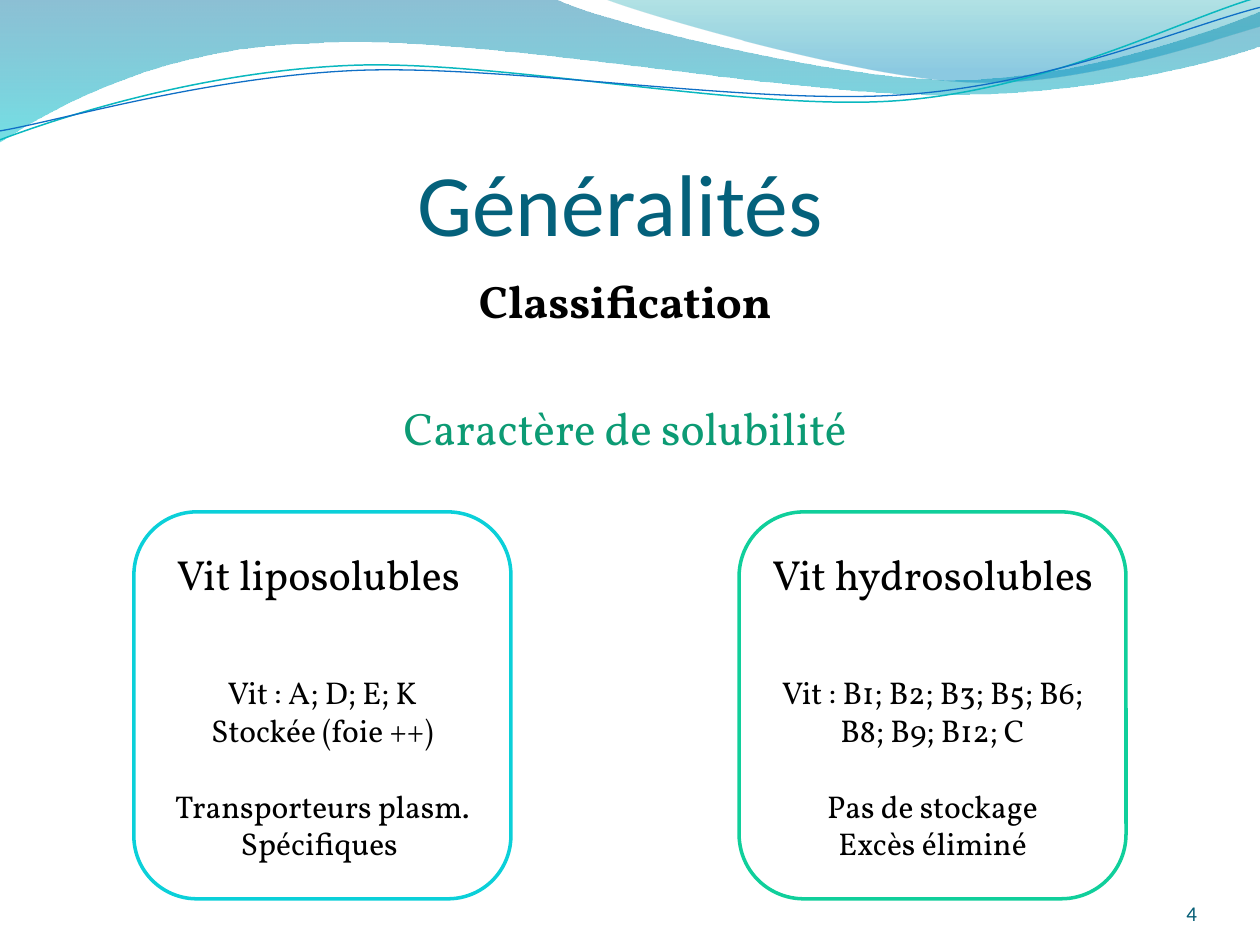
from lxml.etree import SubElement as Sub
from pptx import Presentation
from pptx.dml.color import RGBColor
from pptx.enum.shapes import MSO_SHAPE as Kind
from pptx.enum.text import MSO_ANCHOR as Anchor, PP_ALIGN as Align
from pptx.oxml.ns import qn
from pptx.util import Cm, Pt

# Paths in cm: a pair is a straight line, six numbers are a curve.
BANDS = [
    ([(0, 0), (11.18, -0.03),
      (12.09, 0.43, 16.87, 1.6, 19.25, 1.6),
      (21.67, 1.6, 24.33, 0.66, 25.4, 0.23), (25.43, 0.91),
      (24.97, 1.12, 22.1, 1.93, 18.95, 1.91),
      (15.8, 1.91, 9.7, 0.71, 6.53, 0.86),
      (3.28, 0.91, 1.17, 2.11, -0.03, 2.87)],
     [(0, "0074A1", 45), (100, "00C6CF", 55)]),
    ([(12.17, -0.03),
      (12.93, 0.28, 17.32, 1.57, 19.53, 1.65),
      (21.74, 1.75, 24.41, 0.81, 25.4, 0.53), (25.4, 0)],
     [(0, "00A1A9", 30), (80, "008BBF", 45)]),
]
WAVES = [
    ([(0, 2.82),
      (1.22, 2.36, 4.01, 1.45, 7.04, 1.32),
      (10.03, 1.19, 15.06, 2.26, 18.11, 2.03),
      (21.16, 1.8, 23.83, 0.38, 25.35, -0.05)], "0AB8BF", 0.85),
    ([(0, 2.64),
      (1.19, 2.44, 4.17, 1.55, 7.19, 1.42),
      (10.24, 1.3, 15.16, 2.13, 18.21, 1.91),
      (21.23, 1.7, 23.9, 0.53, 25.4, 0.15)], "0F6FC6", 0.75),
]

STYLES = {
    "title": dict(name="Calibri", size=Pt(50), color="04617B"),
    "head": dict(name="Vollkorn", size=Pt(26), color="000000", bold=True),
    "sub": dict(name="Vollkorn", size=Pt(26), color="0C9B74"),
    "group": dict(name="Vollkorn", size=Pt(24), color="000000"),
    "item": dict(name="Vollkorn", size=Pt(18), color="000000"),
    "page": dict(name="Vollkorn", size=Pt(12), color="045D75"),
}

# Each paragraph: text, style, space before in points.
TITLE = [("Généralités ", "title", 0)]
INTRO = [("Classification ", "head", 0),
         ("Caractère de solubilité ", "sub", 41.4)]
PAGE = [("4", "page", 0)]
CARDS = [
    (2.7, 7.6, "0BD0D9", [
        ("Vit liposolubles ", "group", 0),
        ("Vit : A; D; E; K", "item", 42.4),
        ("Stockée (foie ++)", "item", 0),
        ("Transporteurs plasm. Spécifiques ", "item", 21.6)]),
    (14.9, 7.8, "10CF9B", [
        ("Vit hydrosolubles ", "group", 0),
        ("Vit : B1; B2; B3; B5; B6; B8; B9; B12; C", "item", 42.4),
        ("Pas de stockage", "item", 21.6),
        ("Excès éliminé", "item", 0)]),
]
CARD_TOP, CARD_TALL = 10.32, 7.8


def tint(hue):
    return RGBColor.from_string(hue)


def draw(shapes, path, close):
    """Lay all points as lines, then join each curve's three into one."""
    dots = [(Cm(part[i]), Cm(part[i + 1]))
            for part in path for i in range(0, len(part), 2)]
    pen = shapes.build_freeform(*dots[0], scale=1.0)
    pen.add_line_segments(dots[1:], close=close)
    shape = pen.convert_to_shape()
    shape.shadow.inherit = False
    lines = iter(list(shape.element.spPr.iter(qn("a:lnTo"))))
    for part in path[1:]:
        first = next(lines)
        if len(part) == 6:
            first.tag = qn("a:cubicBezTo")
            for _ in range(2):
                line = next(lines)
                first.append(line[0])
                line.getparent().remove(line)
    return shape


def shade(shape, stops):
    """Fill from top to bottom with see-through colours."""
    shape.line.fill.background()
    shape.fill.gradient()
    shape.fill.gradient_angle = 270
    for stop, (place, hue, _) in zip(shape.fill.gradient_stops, stops):
        stop.position = place / 100
        stop.color.rgb = tint(hue)
    for node, (_, _, alpha) in zip(
            shape.element.spPr.iter(qn("a:srgbClr")), stops):
        Sub(node, qn("a:alpha"), val=str(alpha * 1000))


def write(shape, lines, align=Align.CENTER, **frame):
    text = shape.text_frame
    text.word_wrap = True
    for key, value in frame.items():
        setattr(text, key, value)
    for i, (words, style, gap) in enumerate(lines):
        para = text.add_paragraph() if i else text.paragraphs[0]
        para.alignment = align
        if gap:
            para.space_before = Pt(gap)
        run = para.add_run()
        run.text = words
        for key, value in STYLES[style].items():
            if key == "color":
                run.font.color.rgb = tint(value)
            else:
                setattr(run.font, key, value)
    return text.paragraphs[0]


def main():
    deck = Presentation()
    deck.slide_width, deck.slide_height = Cm(25.4), Cm(19.05)
    shapes = deck.slides.add_slide(deck.slide_layouts[6]).shapes

    for path, stops in BANDS:
        shade(draw(shapes, path, True), stops)
    for path, hue, width in WAVES:
        wave = draw(shapes, path, False)
        wave.fill.background()
        wave.line.color.rgb = tint(hue)
        wave.line.width = Pt(width)

    def box(*place):
        return shapes.add_textbox(*map(Cm, place))

    flush = dict(margin_left=0, margin_right=0, margin_bottom=0,
                 vertical_anchor=Anchor.BOTTOM)
    write(box(1.27, 1.94, 22.86, 3.18), TITLE, **flush)
    write(box(1.27, 5.38, 22.86, 4.75), INTRO)

    for left, wide, hue, lines in CARDS:
        card = shapes.add_shape(Kind.ROUNDED_RECTANGLE, *map(
            Cm, (left, CARD_TOP, wide, CARD_TALL)))
        card.shadow.inherit = False
        card.fill.solid()
        card.fill.fore_color.rgb = tint("FFFFFF")
        card.line.color.rgb = tint(hue)
        card.line.width = Pt(2)
        write(card, lines, vertical_anchor=Anchor.MIDDLE)

    page = write(box(22.02, 17.65, 2.11, 1.02), PAGE, Align.RIGHT,
                 margin_top=0, **flush)
    page._p.get_or_add_pPr().set("rtl", "1")
    Sub(page.runs[0].font._element, qn("a:cs"), typeface="Calibri")
    deck.save("out.pptx")


if __name__ == "__main__":
    main()
